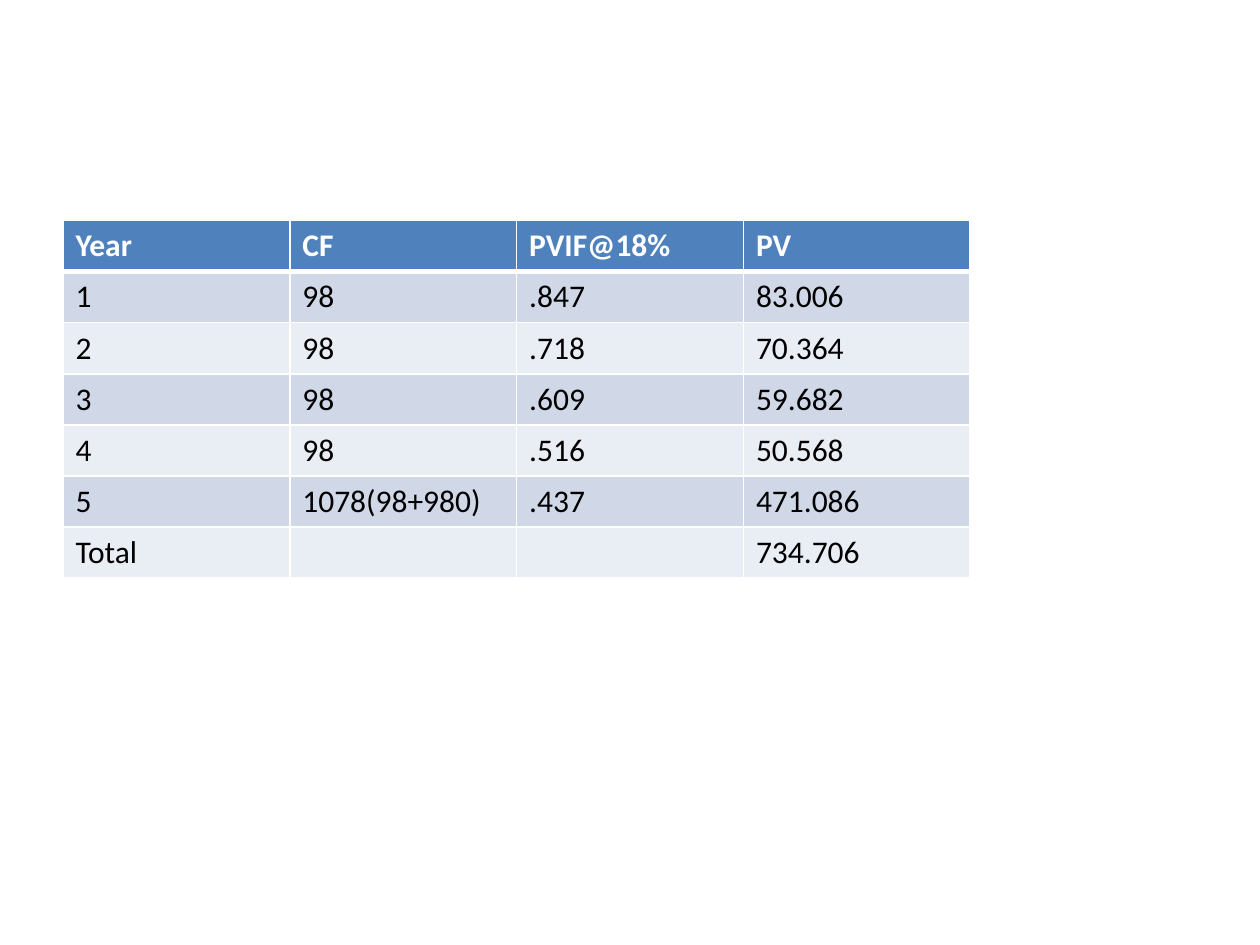
from dataclasses import dataclass

from lxml.etree import SubElement
from pptx import Presentation
from pptx.dml.color import RGBColor
from pptx.oxml.ns import qn
from pptx.util import Inches, Pt


@dataclass(frozen=True)
class Theme:
    font: str = "Calibri"
    text_size: int = 18
    header_fill: str = "4F81BD"
    band_fills: tuple = ("D0D8E8", "E9EDF4")
    header_text: str = "FFFFFF"
    body_text: str = "000000"
    border: str = "FFFFFF"
    thin_border: int = 1
    header_border: int = 3


THEME = Theme()
SLIDE_WIDTH = Inches(10)
SLIDE_HEIGHT = Inches(7.5)
BLANK_LAYOUT = 6

PRESENT_VALUES = (
    ("Year", "CF", "PVIF@18%", "PV"),
    ("1", "98", ".847", "83.006"),
    ("2", "98", ".718", "70.364"),
    ("3", "98", ".609", "59.682"),
    ("4", "98", ".516", "50.568"),
    ("5", "1078(98+980)", ".437", "471.086"),
    ("Total", "", "", "734.706"),
)


def write_text(cell, text, color, bold):
    if not text:
        return
    span = cell.text_frame.paragraphs[0].add_run()
    span.text = text
    span.font.name = THEME.font
    span.font.size = Pt(THEME.text_size)
    span.font.bold = bold
    span.font.color.rgb = RGBColor.from_string(color)


def draw_borders(cell, widths):
    properties = cell._tc.get_or_add_tcPr()
    for position, (side, width) in enumerate(widths.items()):
        line = properties.makeelement(qn(f"a:{side}"), {"w": str(Pt(width))})
        fill = SubElement(line, qn("a:solidFill"))
        SubElement(fill, qn("a:srgbClr"), val=THEME.border)
        properties.insert(position, line)


def format_cell(cell, text, row):
    is_header = row == 0
    fill = THEME.header_fill if is_header else THEME.band_fills[(row - 1) % 2]
    cell.fill.solid()
    cell.fill.fore_color.rgb = RGBColor.from_string(fill)
    color = THEME.header_text if is_header else THEME.body_text
    write_text(cell, text, color, is_header)
    widths = dict.fromkeys(("lnL", "lnR", "lnT", "lnB"), THEME.thin_border)
    if is_header:
        widths["lnB"] = THEME.header_border
    elif row == 1:
        widths["lnT"] = THEME.header_border
    draw_borders(cell, widths)


def add_value_table(page, values, left, top, column_width, row_height):
    row_count, column_count = len(values), len(values[0])
    frame = page.shapes.add_table(
        row_count, column_count, left, top,
        column_width * column_count, row_height * row_count,
    )
    table = frame.table
    for column in table.columns:
        column.width = column_width
    for row, texts in enumerate(values):
        table.rows[row].height = row_height
        for column, text in enumerate(texts):
            format_cell(table.cell(row, column), text, row)


def main():
    deck = Presentation()
    deck.slide_width = SLIDE_WIDTH
    deck.slide_height = SLIDE_HEIGHT
    page = deck.slides.add_slide(deck.slide_layouts[BLANK_LAYOUT])
    add_value_table(
        page,
        PRESENT_VALUES,
        left=int(SLIDE_WIDTH * 0.05),
        top=Inches(1.75),
        column_width=int(SLIDE_WIDTH * 0.18),
        row_height=Inches(2.84) // len(PRESENT_VALUES),
    )
    deck.save("out.pptx")


if __name__ == "__main__":
    main()
